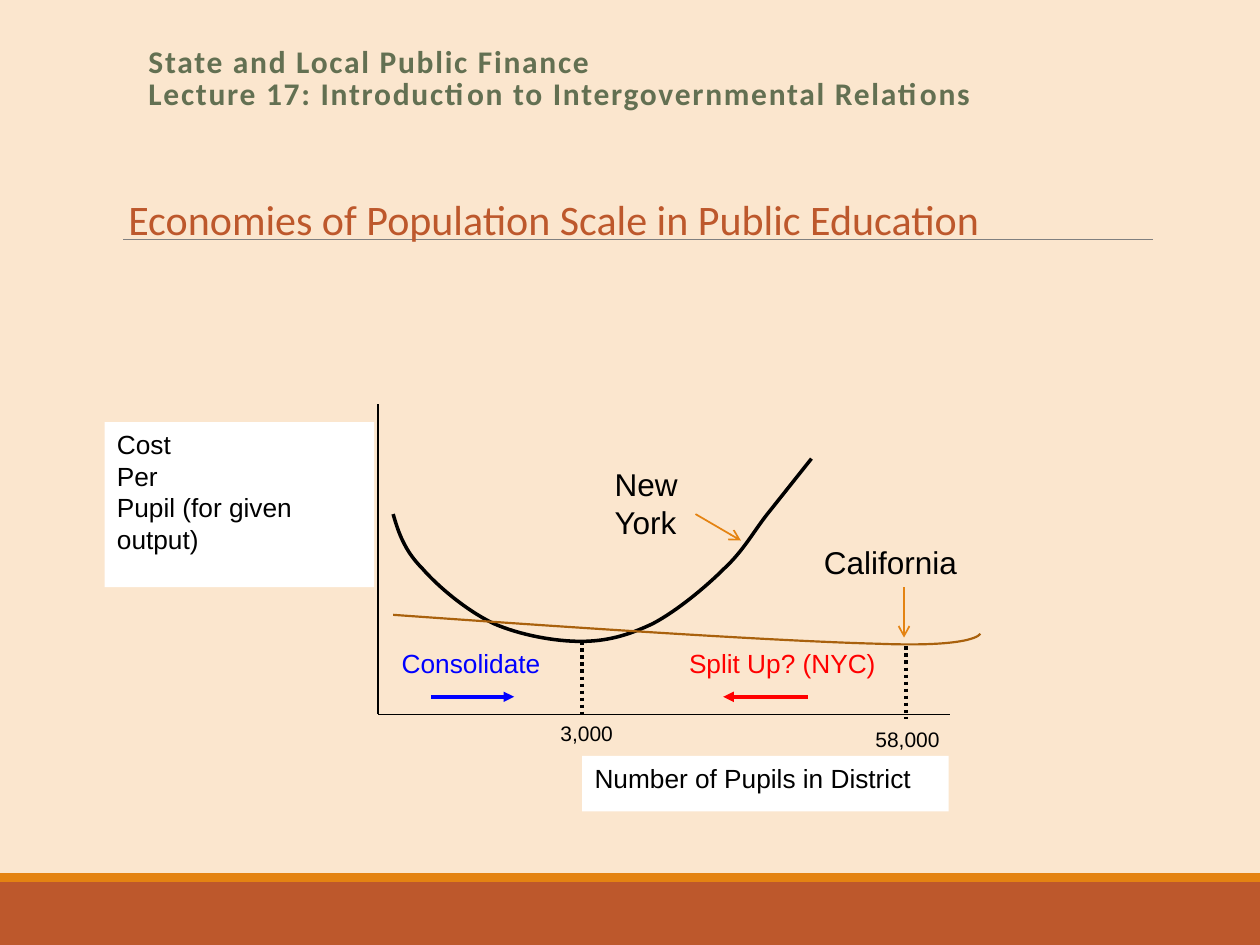
import pptx
import pptx.dml.color
import pptx.enum.dml
import pptx.enum.shapes
import pptx.oxml.ns
import pptx.oxml.xmlchemy
import pptx.util

WIDTH, HEIGHT = pptx.util.Inches(10), pptx.util.Inches(7.5)
COLUMNS, ROWS = 100, 75

BLACK, WHITE, BLUE, RED = "000000", "FFFFFF", "0000FF", "FF0000"
BACKGROUND, RUST, ORANGE, BROWN, GREEN, GRAY = (
    "FBE6CE", "BD582C", "E48312", "A9610D", "637052", "808080")

AXIS_LEFT, AXIS_BOTTOM = 30, 56.7
NEW_YORK_MINIMUM, CALIFORNIA_MINIMUM = 46.2, 71.9
LABEL_HEIGHT = 4.4

# A start point, then two control points and an end point for each curve.
NEW_YORK_CURVE = [
    (31.2, 40.8),
    (31.6, 42.2), (32.1, 43.7), (33.5, 45.1),
    (34.8, 46.6), (37.1, 48.5), (39.2, 49.5),
    (41.3, 50.4), (44, 50.9), (46.1, 50.9),
    (48.2, 50.9), (49.9, 50.4), (51.8, 49.5),
    (53.7, 48.5), (56, 46.6), (57.5, 45.1),
    (59, 43.7), (59.8, 42.2), (60.9, 40.8),
    (62.1, 39.3), (63.2, 37.9), (64.4, 36.4),
]
CALIFORNIA_CURVE = [
    (31.2, 48.8),
    (46.6, 49.9), (62, 50.9), (69.7, 51.1),
    (77.5, 51.4), (77.8, 50.3), (77.8, 50.3),
]


def color(hex_string):
    return pptx.dml.color.RGBColor.from_string(hex_string)


def element(tag):
    return pptx.oxml.xmlchemy.OxmlElement(tag)


def place(column, row):
    """Turn a grid position or size into slide units."""
    return round(WIDTH * column / COLUMNS), round(HEIGHT * row / ROWS)


def set_format(target, values):
    for name, value in values.items():
        setattr(target, name, value)


def style_line(line, hex_string, points):
    line.color.rgb = color(hex_string)
    line.width = pptx.util.Pt(points)


def add_block(slide, left, top, width, height, fill):
    shape = slide.shapes.add_shape(
        pptx.enum.shapes.MSO_SHAPE.RECTANGLE, *place(left, top), *place(width, height))
    shape.shadow.inherit = False
    shape.fill.solid()
    shape.fill.fore_color.rgb = color(fill)
    shape.line.fill.background()


def add_text(slide, box, text, size, hex_string, font="Arial", bold=False,
             line_spacing=None, letter_spacing=None, fill=None):
    shape = slide.shapes.add_textbox(*place(*box[:2]), *place(*box[2:]))
    if fill:
        shape.fill.solid()
        shape.fill.fore_color.rgb = color(fill)
    frame = shape.text_frame
    frame.word_wrap = True
    frame.text = text
    for paragraph in frame.paragraphs:
        paragraph.line_spacing = line_spacing
        for run in paragraph.runs:
            set_format(run.font, {"name": font, "size": pptx.util.Pt(size), "bold": bold})
            run.font.color.rgb = color(hex_string)
            if letter_spacing:
                run.font._element.set("spc", str(letter_spacing * 100))
    return shape


def add_line(slide, start, end, hex_string, points, dash=None, arrowhead=None):
    connector = slide.shapes.add_connector(
        pptx.enum.shapes.MSO_CONNECTOR.STRAIGHT, *place(*start), *place(*end))
    style_line(connector.line, hex_string, points)
    if dash:
        connector.line.dash_style = dash
    if arrowhead:
        tail = element("a:tailEnd")
        tail.set("type", arrowhead)
        connector.line._get_or_add_ln().append(tail)
    connector._element.spPr.append(element("a:effectLst"))
    return connector


def add_curve(slide, points, hex_string, line_width):
    """Draw an open Bézier curve, turning each three segments into one cubic."""
    corners = [place(*point) for point in points]
    builder = slide.shapes.build_freeform(*corners[0])
    builder.add_line_segments(corners[1:], close=False)
    shape = builder.convert_to_shape()
    shape.shadow.inherit = False
    shape.fill.background()
    style_line(shape.line, hex_string, line_width)
    segments = list(shape._element.iter(pptx.oxml.ns.qn("a:lnTo")))
    for first in range(0, len(segments), 3):
        cubic = element("a:cubicBezTo")
        segments[first].addprevious(cubic)
        for segment in segments[first:first + 3]:
            cubic.append(segment[0])
            segment.getparent().remove(segment)


def add_frame(slide):
    slide.background.fill.solid()
    slide.background.fill.fore_color.rgb = color(BACKGROUND)
    add_block(slide, 0, 70, COLUMNS, 5, RUST)
    add_block(slide, 0, 69.3, COLUMNS, 0.7, ORANGE)
    add_line(slide, (9.8, 19), (91.5, 19), GRAY, 0.5)


def add_headings(slide):
    add_text(slide, (10.8, 3.3, 82.5, 6.5),
             "State and Local Public Finance\v"
             "Lecture 17: Introduction to Intergovernmental Relations",
             18, GREEN, font="Calibri", bold=True, line_spacing=0.85, letter_spacing=1)
    add_text(slide, (9.2, 14.9, 76.9, 5),
             "Economies of Population Scale in Public Education", 24, RUST, font="Calibri")


def add_axes(slide):
    origin = (AXIS_LEFT, AXIS_BOTTOM)
    add_line(slide, (AXIS_LEFT, 32.1), origin, BLACK, 0.75)
    add_line(slide, origin, (75.4, AXIS_BOTTOM), BLACK, 0.75)
    add_text(slide, (NEW_YORK_MINIMUM, 60, 29.1, LABEL_HEIGHT),
             "Number of Pupils in District", 15, BLACK, fill=WHITE)
    add_text(slide, (8.3, 33.5, 21.4, 13.1),
             "Cost\nPer\nPupil (for given output)", 15, BLACK, fill=WHITE)


def add_minimums(slide):
    dots = pptx.enum.dml.MSO_LINE.ROUND_DOT
    for column, top, bottom, label_left, label_top, label in (
        (NEW_YORK_MINIMUM, 50.9, AXIS_BOTTOM, 43.5, 56.7, "3,000"),
        (CALIFORNIA_MINIMUM, 51.3, 57.1, 68.5, 57.2, "58,000"),
    ):
        add_line(slide, (column, top), (column, bottom), BLACK, 2, dash=dots)
        add_text(slide, (label_left, label_top, 7.7, LABEL_HEIGHT), label, 12, BLACK)


def add_policies(slide):
    for left, width, label, arrow_start, arrow_end, hex_string in (
        (30.9, 14.4, "Consolidate", 34.2, 40.8, BLUE),
        (53.7, 17.5, "Split Up? (NYC)", 64.1, 57.4, RED),
    ):
        add_text(slide, (left, 50.9, width, LABEL_HEIGHT), label, 15, hex_string)
        add_line(slide, (arrow_start, 55.3), (arrow_end, 55.3), hex_string, 2,
                 arrowhead="triangle")


def add_states(slide):
    add_curve(slide, NEW_YORK_CURVE, BLACK, 2)
    add_curve(slide, CALIFORNIA_CURVE, BROWN, 1.25)
    add_text(slide, (47.8, 36.4, 11, 7.1), "New York", 18, BLACK)
    add_line(slide, (55.2, 40.8), (58.8, 42.9), ORANGE, 1, arrowhead="arrow")
    california = add_text(slide, (64.4, 42.6, 14.7, 4), "California", 18, BLACK)
    pointer = add_line(slide, (71.75, 46.6), (71.75, 50.6), ORANGE, 1, arrowhead="arrow")
    pointer.begin_connect(california, 2)


def main():
    presentation = pptx.Presentation()
    set_format(presentation, {"slide_width": WIDTH, "slide_height": HEIGHT})
    slide = presentation.slides.add_slide(presentation.slide_layouts[6])
    for add_part in (add_frame, add_axes, add_minimums, add_policies, add_states, add_headings):
        add_part(slide)
    presentation.save("out.pptx")


if __name__ == "__main__":
    main()
